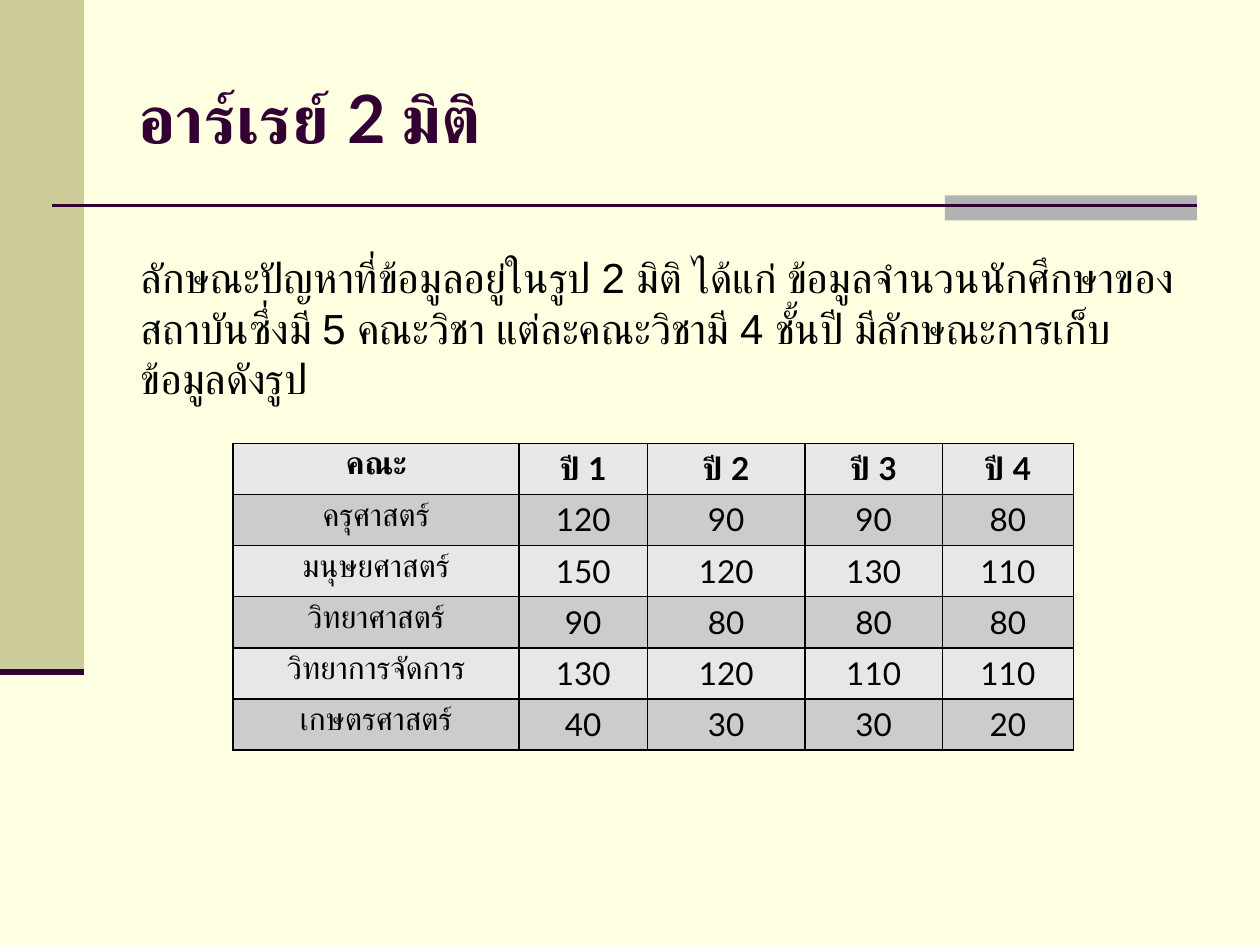
from lxml import etree
from pptx import Presentation
from pptx.dml.color import RGBColor
from pptx.enum.shapes import MSO_CONNECTOR, MSO_SHAPE
from pptx.enum.text import MSO_ANCHOR, MSO_AUTO_SIZE, PP_ALIGN
from pptx.oxml.ns import qn
from pptx.util import Pt

RECT = MSO_SHAPE.RECTANGLE
STRAIGHT = MSO_CONNECTOR.STRAIGHT
LEFT, CENTER = PP_ALIGN.LEFT, PP_ALIGN.CENTER
MIDDLE, TOP = MSO_ANCHOR.MIDDLE, MSO_ANCHOR.TOP
NO_FIT, GROW = MSO_AUTO_SIZE.NONE, MSO_AUTO_SIZE.SHAPE_TO_FIT_TEXT

PLUM = "330033"
BLACK = "000000"
HEADER_FMT = {"name": "Lato", "size": Pt(18), "bold": True}
CELL_FMT = {**HEADER_FMT, "bold": False}

COL_WIDTHS = [163.4, 73.4, 90, 78.5, 74.9]
ROW_HEIGHT = 29.2
ROW_FILLS = ["E7E7E7", "CCCCCC"]
ROWS = [
    ["คณะ", "ปี 1", "ปี 2", "ปี 3", "ปี 4"],
    ["ครุศาสตร์", 120, 90, 90, 80],
    ["มนุษยศาสตร์", 150, 120, 130, 110],
    ["วิทยาศาสตร์", 90, 80, 80, 80],
    ["วิทยาการจัดการ", 130, 120, 110, 110],
    ["เกษตรศาสตร์", 40, 30, 30, 20],
]


def rgb(value):
    return RGBColor.from_string(value)


def set_fill(obj, color):
    obj.fill.solid()
    obj.fill.fore_color.rgb = rgb(color)


def write(tf, text, color, fmt, align=LEFT):
    p = tf.paragraphs[0]
    p.alignment = align
    r = p.add_run()
    r.text = text
    for key, value in fmt.items():
        setattr(r.font, key, value)
    r.font.color.rgb = rgb(color)


def add_block(s, box, color):
    sp = s.shapes.add_shape(RECT, *map(Pt, box))
    sp.shadow.inherit = False
    set_fill(sp, color)
    sp.line.fill.background()


def add_rule(s, x1, x2, y, width):
    line = s.shapes.add_connector(STRAIGHT, Pt(x1), Pt(y), Pt(x2), Pt(y))
    line.line.color.rgb = rgb(PLUM)
    line.line.width = Pt(width)
    etree.SubElement(line._element.spPr, qn("a:effectLst"))


def add_decoration(s, width, height):
    # Side band and its base line
    band_w, band_h = 48, 384
    add_block(s, (0, 0, band_w, band_h), "CCCC99")
    # Rule under the title, with its accent bar
    right = width - 36
    add_block(s, (right - 144, 111.6, 144, 14.4), "B2B2B2")
    add_rule(s, 30, right, 117.5, 1.5)
    add_rule(s, 0, band_w, band_h, 3.5)


def place_text(sp, box, text, color, fmt, anchor, fit):
    sp.left, sp.top, sp.width, sp.height = map(Pt, box)
    tf = sp.text_frame
    tf.word_wrap = True
    tf.auto_size = fit
    tf.vertical_anchor = anchor
    write(tf, text, color, fmt)


def add_title(s, box):
    place_text(s.shapes.title, box, "อาร์เรย์ 2 มิติ", PLUM,
               {"name": "Lato", "size": Pt(38), "bold": True}, MIDDLE, NO_FIT)


def add_intro(s, box):
    text = ("ลักษณะปัญหาที่ข้อมูลอยู่ในรูป 2 มิติ ได้แก่ ข้อมูลจำนวนนักศึกษาของ"
            "สถาบันซึ่งมี 5 คณะวิชา แต่ละคณะวิชามี 4 ชั้นปี "
            "มีลักษณะการเก็บข้อมูลดังรูป")
    place_text(s.shapes.add_textbox(*map(Pt, box)), box, text, BLACK,
               {"name": "Arial", "size": Pt(24)}, TOP, GROW)


def set_borders(cell, color, width):
    tc_pr = cell._tc.get_or_add_tcPr()
    for i, side in enumerate(("lnL", "lnR", "lnT", "lnB")):
        ln = etree.Element(qn(f"a:{side}"), w=str(Pt(width)))
        fill = etree.SubElement(ln, qn("a:solidFill"))
        etree.SubElement(fill, qn("a:srgbClr"), val=color)
        tc_pr.insert(i, ln)


def add_student_table(s, left, top):
    table = s.shapes.add_table(
        len(ROWS), len(COL_WIDTHS), Pt(left), Pt(top),
        Pt(sum(COL_WIDTHS)), Pt(ROW_HEIGHT * len(ROWS))).table
    for col, width in zip(table.columns, COL_WIDTHS):
        col.width = Pt(width)
    for i, values in enumerate(ROWS):
        table.rows[i].height = Pt(ROW_HEIGHT)
        fmt = CELL_FMT if i else HEADER_FMT
        for j, value in enumerate(values):
            cell = table.cell(i, j)
            set_fill(cell, ROW_FILLS[i % 2])
            set_borders(cell, BLACK, 1)
            write(cell.text_frame, str(value), BLACK, fmt, CENTER)


def main():
    width, height = 720, 540
    prs = Presentation()
    prs.slide_width, prs.slide_height = Pt(width), Pt(height)
    s = prs.slides.add_slide(prs.slide_layouts[5])
    set_fill(s.background, "FFFFE1")
    add_decoration(s, width, height)
    add_title(s, (72, 21.6, 612, 90))
    add_intro(s, (73.4, 140.4, 613.4, 94.3))
    add_student_table(s, 133.2, 253.4)
    prs.save("out.pptx")


if __name__ == "__main__":
    main()
